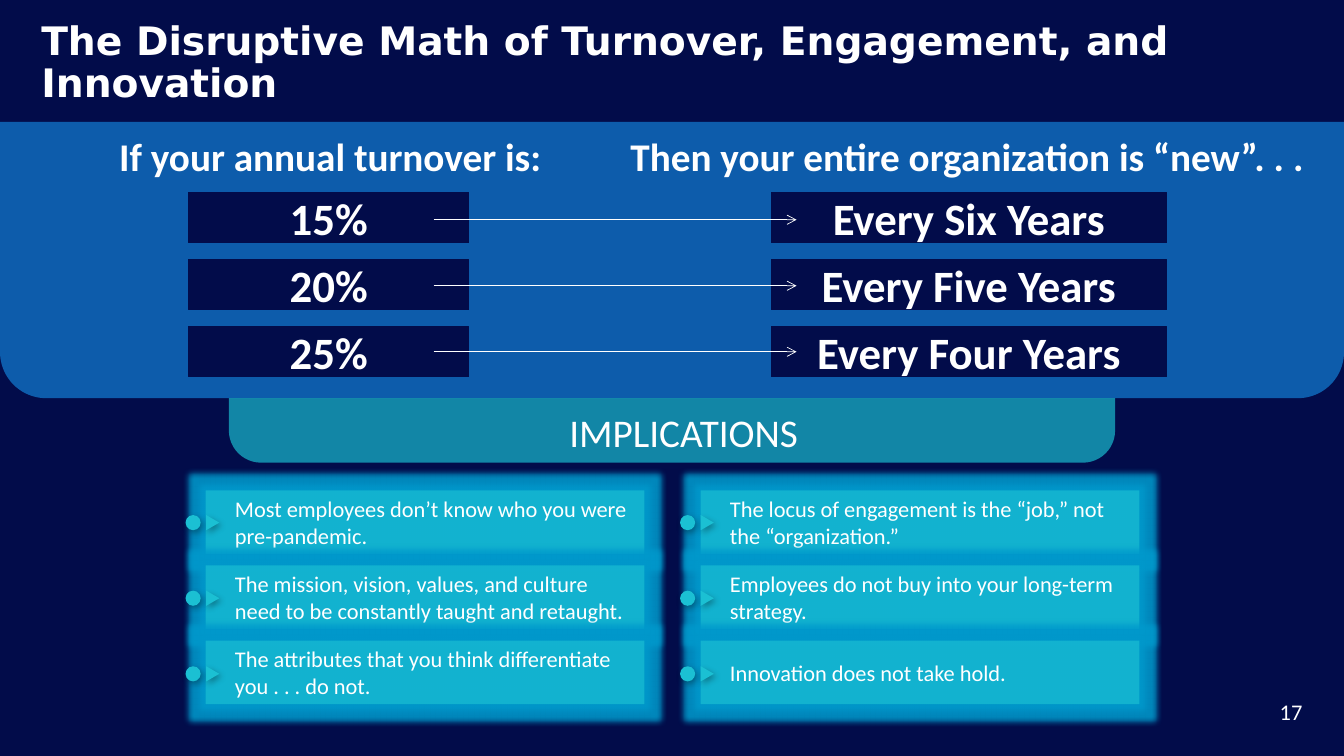
"""Build the slide on turnover, engagement and innovation."""
import pptx
import pptx.dml.color
import pptx.enum.shapes
import pptx.enum.text
import pptx.oxml.ns
import pptx.util
from lxml import etree

NAVY, BLUE, TEAL, GLOW, WHITE = "020C4A", "0D5CAB", "1BC0D3", "0099CC", "FFFFFF"
KIND = pptx.enum.shapes.MSO_SHAPE
ALIGN = pptx.enum.text.PP_ALIGN
ANCHOR = pptx.enum.text.MSO_ANCHOR
qn = pptx.oxml.ns.qn

deck = pptx.Presentation()
deck.slide_width = pptx.util.Inches(13.33)
deck.slide_height = pptx.util.Inches(7.5)
CELL = deck.slide_height / 75
slide = deck.slides.add_slide(deck.slide_layouts[5])
shapes = slide.shapes


def paint(fill, hue, alpha=100):
    fill.solid()
    fill.fore_color.rgb = pptx.dml.color.RGBColor.from_string(hue)
    if alpha < 100:
        tint = fill.fore_color._xFill.find(qn("a:srgbClr"))
        etree.SubElement(tint, qn("a:alpha"), val=str(alpha * 1000))


def write(text, spot, home=shapes, kind=None, hue=None, alpha=100, edge=None,
          size=28, bold=False, face="Calibri", align=ALIGN.CENTER,
          anchor=ANCHOR.MIDDLE, pads=(1, 0.5, 1, 0.5), turn=0, lead=None):
    box = [round(n * CELL) for n in spot]
    if kind == "title":
        shape = home.title
        shape.left, shape.top, shape.width, shape.height = box
    elif kind is None:
        shape = home.add_textbox(*box)
    else:
        shape = home.add_shape(kind, *box)
        shape.shadow.inherit = False
        shape.rotation = turn
        paint(shape.fill, hue, alpha)
        if edge:
            paint(shape.line.fill, edge)
            shape.line.width = pptx.util.Pt(0.75)
        else:
            shape.line.fill.background()
    if text:
        frame = shape.text_frame
        frame.word_wrap = True
        frame.auto_size = pptx.enum.text.MSO_AUTO_SIZE.NONE
        frame.vertical_anchor = anchor
        (frame.margin_left, frame.margin_top,
         frame.margin_right, frame.margin_bottom) = [round(n * CELL) for n in pads]
        para = frame.paragraphs[0]
        para.alignment = align
        para.line_spacing = lead
        run = para.add_run()
        run.text = text
        run.font.size = pptx.util.Pt(size)
        run.font.bold = bold
        run.font.name = face
        paint(run.font.fill, WHITE)
    return shape


paint(slide.background.fill, NAVY)
write("The Disruptive Math of Turnover, Engagement, and Innovation",
      (3.1, 0, 127.3, 12.7), kind="title", bold=True, face="DejaVu Sans",
      align=ALIGN.LEFT, pads=(1, 0, 0, 0), lead=0.9)
write("", (0, 12.1, 133.3, 27.4), kind=KIND.ROUND_2_SAME_RECTANGLE, hue=BLUE, turn=180)
write("17", (125.6, 68.1, 4.9, 4.9), size=16, pads=(0, 0, 0, 0))

for text, left, width in (
    ("If your annual turnover is:", 9.1, 47.3),
    ("Then your entire organization is “new”. . .", 61.3, 69.2),
):
    write(text, (left, 12.6, width, 5.7), bold=True, anchor=ANCHOR.TOP)

rates = (("15%", "Every Six Years"), ("20%", "Every Five Years"), ("25%", "Every Four Years"))
for row, pair in enumerate(rates):
    for text, left, width in zip(pair, (18.7, 76.5), (27.8, 39.2)):
        write(text, (left, 19.1 + 6.65 * row, width, 5), kind=KIND.RECTANGLE,
              hue=NAVY, edge=NAVY, size=32, bold=True)

bar = write("", (22.7, 39.5, 87.9, 6.4), kind=KIND.ROUND_2_SAME_RECTANGLE,
            hue=TEAL, alpha=68, turn=180)
bar.adjustments[0] = 0.5
write("IMPLICATIONS", (28.9, 40, 77.8, 5.7), anchor=ANCHOR.TOP)

points = (
    ("Most employees don’t know who you were pre-pandemic.",
     "The mission, vision, values, and culture need to be constantly taught and retaught.",
     "The attributes that you think differentiate you . . . do not."),
    ("The locus of engagement is the “job,” not the “organization.”",
     "Employees do not buy into your long-term strategy.",
     "Innovation does not take hold."),
)
for col, texts in enumerate(points):
    left = 20.4 + 49.1 * col
    for row, text in enumerate(texts):
        card = write(text, (left, 48.65 + 7.45 * row, 43.5, 6.3), kind=KIND.RECTANGLE,
                     hue=TEAL, alpha=68, size=16, align=ALIGN.LEFT, pads=(2.9, 0.5, 1, 0.5))
        halo = etree.SubElement(card.element.spPr.find(qn("a:effectLst")), qn("a:glow"),
                                rad=str(pptx.util.Pt(8)))
        tint = etree.SubElement(halo, qn("a:srgbClr"), val=GLOW)
        etree.SubElement(tint, qn("a:alpha"), val="88000")

for col in range(2):
    for row in range(3):
        left, top = 18.4 + 49.05 * col, 51.1 + 7.5 * row
        group = shapes.add_group_shape().shapes
        dot = write("", (left, top, 1.5, 1.5), home=group, kind=KIND.OVAL, hue=TEAL)
        tip = write("", (left + 1.95, top + 0.1, 1.5, 1.3), home=group,
                    kind=KIND.ISOSCELES_TRIANGLE, hue=TEAL, turn=90)
        for mark in (dot, tip):
            shade = etree.SubElement(
                mark.element.spPr.find(qn("a:effectLst")), qn("a:outerShdw"),
                blurRad=str(pptx.util.Pt(4.5)), dist=str(pptx.util.Pt(2.6)),
                dir=str(53 * 60000), rotWithShape="0")
            tint = etree.SubElement(shade, qn("a:srgbClr"), val="000000")
            etree.SubElement(tint, qn("a:alpha"), val="30000")

for row in range(3):
    ends = [round(n * CELL) for n in (43, 21.8 + 6.55 * row, 79, 21.8 + 6.55 * row)]
    arrow = shapes.add_connector(pptx.enum.shapes.MSO_CONNECTOR.STRAIGHT, *ends)
    paint(arrow.line.fill, WHITE)
    arrow.line.width = pptx.util.Pt(0.5)
    props = arrow.element.spPr
    etree.SubElement(props.find(qn("a:ln")), qn("a:tailEnd"), type="arrow")
    etree.SubElement(props, qn("a:effectLst"))

deck.save("out.pptx")
